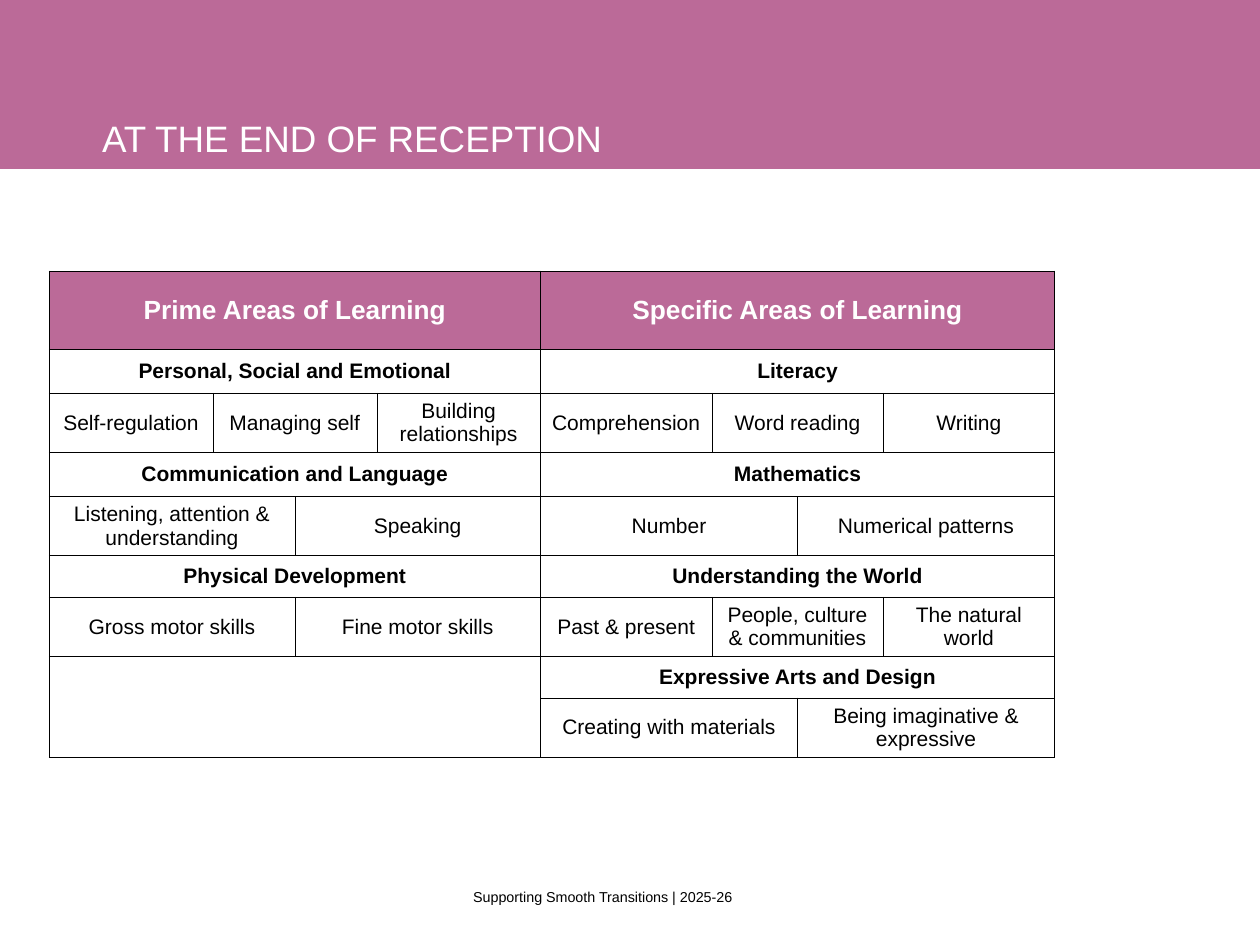
from lxml import etree
from pptx import Presentation
from pptx.enum import shapes, text
from pptx.dml.color import RGBColor
from pptx.oxml import ns
from pptx.util import Inches, Pt

COLORS = {"pink": "BB6A98", "white": "FFFFFF", "black": "000000"}
FONT = "Arial"

# Each row: the cells of the prime half, then those of the specific half
HEADER = (["Prime Areas of Learning"], ["Specific Areas of Learning"])
AREAS = [
    (["Personal, Social and Emotional"], ["Literacy"]),
    (["Self-regulation", "Managing self", "Building relationships"],
     ["Comprehension", "Word reading", "Writing"]),
    (["Communication and Language"], ["Mathematics"]),
    (["Listening, attention & understanding", "Speaking"],
     ["Number", "Numerical patterns"]),
    (["Physical Development"], ["Understanding the World"]),
    (["Gross motor skills", "Fine motor skills"],
     ["Past & present", "People, culture & communities", "The natural world"]),
    ([], ["Expressive Arts and Design"]),
    ([], ["Creating with materials", "Being imaginative & expressive"]),
]
ROW_HEIGHTS = [0.62, 0.35, 0.47, 0.35, 0.47, 0.33, 0.47, 0.33, 0.47]
HALF_UNITS = [0.65, 0.68]
COLUMN_UNITS = [2, 1, 1, 2]
SPANS = {0: [], 1: [4], 2: [2, 2], 3: [1, 2, 1]}  # columns per cell, by cell count


class SlideBuilder:
    def __init__(self, presentation):
        self.slide = presentation.slides.add_slide(presentation.slide_layouts[5])

    def color(self, name):
        return RGBColor.from_string(COLORS[name])

    def format_text(self, text_frame, size, color, align, bold=False):
        for paragraph in text_frame.paragraphs:
            paragraph.alignment = align
            for run in paragraph.runs:
                run.font.name = FONT
                run.font.size = Pt(size)
                run.font.bold = bold
                run.font.color.rgb = self.color(color)

    def title(self, words, left, top, width, height):
        title = self.slide.shapes.title
        title.left, title.top = Inches(left), Inches(top)
        title.width, title.height = Inches(width), Inches(height)
        frame = title.text_frame
        frame.text = words
        frame.auto_size = text.MSO_AUTO_SIZE.NONE
        frame.vertical_anchor = text.MSO_ANCHOR.BOTTOM
        self.format_text(frame, 21, "white", text.PP_ALIGN.LEFT)

    def band(self, left, top, width, height):
        band = self.slide.shapes.add_shape(
            shapes.MSO_SHAPE.RECTANGLE,
            Inches(left), Inches(top), Inches(width), Inches(height))
        band.shadow.inherit = False
        band.fill.solid()
        band.fill.fore_color.rgb = self.color("pink")
        band.line.fill.background()
        self.slide.shapes.title.element.addprevious(band.element)  # behind the title

    def footer(self, words, left, top, width, height):
        footer = self.slide.shapes.add_textbox(
            Inches(left), Inches(top), Inches(width), Inches(height))
        frame = footer.text_frame
        frame.word_wrap = True
        frame.margin_top = frame.margin_bottom = 0
        frame.vertical_anchor = text.MSO_ANCHOR.MIDDLE
        frame.text = words
        self.format_text(frame, 8.2, "black", text.PP_ALIGN.CENTER)

    def style_cell(self, cell, fill):
        cell.margin_left = cell.margin_right = Inches(0.07)
        cell.margin_top = cell.margin_bottom = Inches(0.04)
        cell.vertical_anchor = text.MSO_ANCHOR.MIDDLE
        properties = cell._tc.get_or_add_tcPr()
        for side in ("lnL", "lnR", "lnT", "lnB"):
            line = etree.SubElement(properties, ns.qn(f"a:{side}"), w=str(Pt(0.25)))
            solid = etree.SubElement(line, ns.qn("a:solidFill"))
            etree.SubElement(solid, ns.qn("a:srgbClr"), val=COLORS["black"])
        cell.fill.solid()
        cell.fill.fore_color.rgb = self.color(fill)

    def table(self, rows, left, top):
        widths = [unit * count for unit in HALF_UNITS for count in COLUMN_UNITS]
        table = self.slide.shapes.add_table(
            len(rows), len(widths), Inches(left), Inches(top),
            Inches(sum(widths)), Inches(sum(ROW_HEIGHTS))).table
        for column, width in zip(table.columns, widths):
            column.width = Inches(width)
        for row, height in zip(table.rows, ROW_HEIGHTS):
            row.height = Inches(height)

        for row_index, halves in enumerate(rows):
            is_header = row_index == 0
            for column_index in range(len(widths)):
                self.style_cell(table.cell(row_index, column_index),
                                "pink" if is_header else "white")
            for half_index, labels in enumerate(halves):
                start = half_index * len(COLUMN_UNITS)
                for label, span in zip(labels, SPANS[len(labels)]):
                    cell = table.cell(row_index, start)
                    if span > 1:
                        cell.merge(table.cell(row_index, start + span - 1))
                    cell.text_frame.text = label
                    self.format_text(
                        cell.text_frame, 15 if is_header else 12,
                        "white" if is_header else "black",
                        text.PP_ALIGN.CENTER, bold=len(labels) == 1)
                    start += span

        # Empty area below the prime half
        last = len(rows) - 1
        table.cell(last - 1, 0).merge(table.cell(last, len(COLUMN_UNITS) - 1))


def main():
    presentation = Presentation()
    presentation.slide_width, presentation.slide_height = Inches(10), Inches(7.5)
    builder = SlideBuilder(presentation)

    # Heading
    builder.band(0, 0, 10, 1.34)
    builder.title("AT THE END OF RECEPTION", 0.71, 0.07, 7.51, 1.25)

    # Areas of learning
    builder.table([HEADER] + AREAS, 0.39, 2.15)

    # Footer
    builder.footer("Supporting Smooth Transitions | 2025-26", 3.2, 7.02, 3.17, 0.2)

    presentation.save("out.pptx")


if __name__ == "__main__":
    main()
